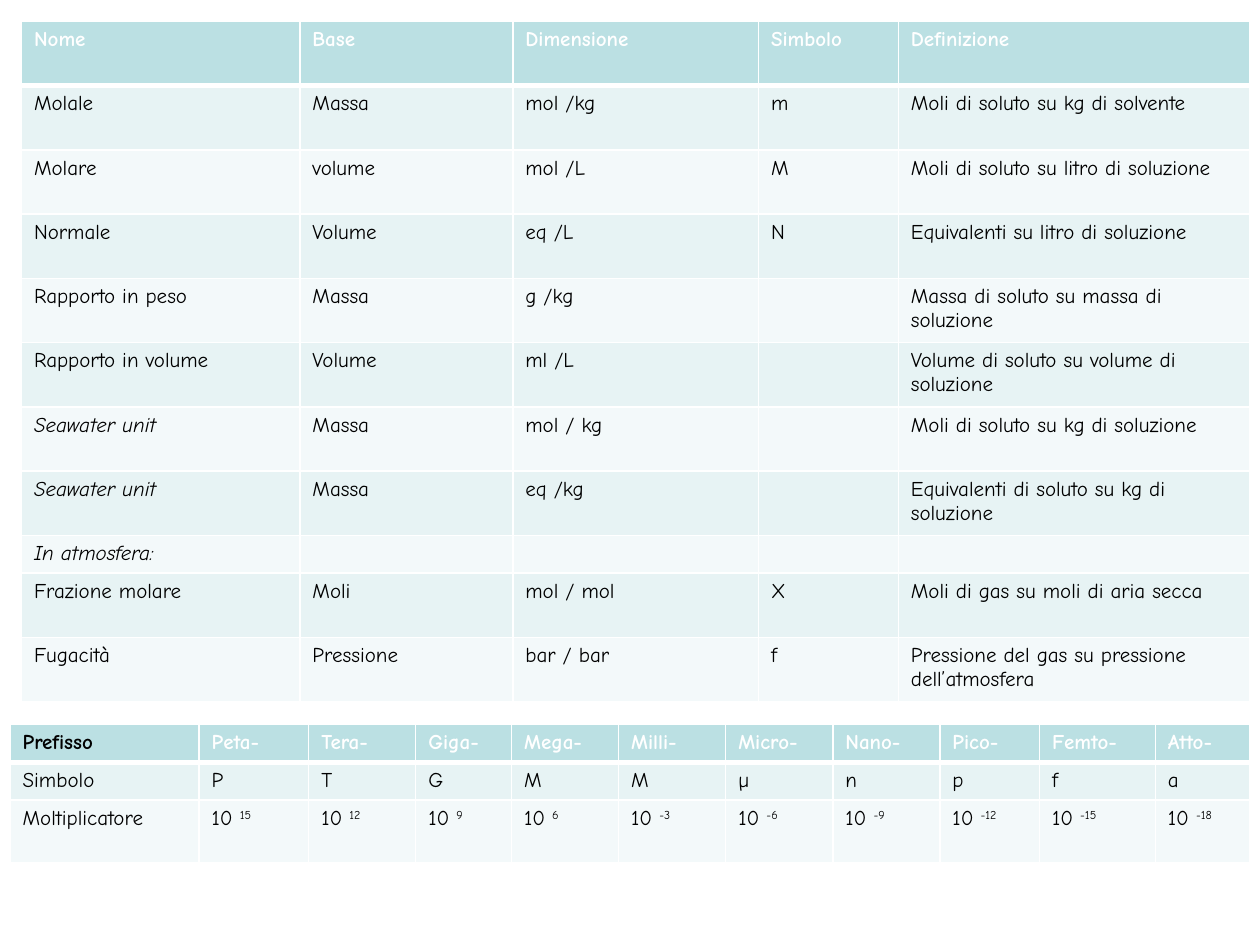
from dataclasses import dataclass

import lxml.etree
import pptx
import pptx.dml.color
import pptx.oxml.ns
import pptx.util

Inches = pptx.util.Inches
qn = pptx.oxml.ns.qn

COLORS = {
    "header": "BBE0E3",
    "odd_band": "E7F3F4",
    "even_band": "F3F9FA",
    "white": "FFFFFF",
    "black": "000000",
}
FONT_NAME = "Comic Neue"
FONT_SIZE = pptx.util.Pt(12)
THIN_BORDER = pptx.util.Pt(1)
HEADER_BORDER = pptx.util.Pt(3)
ITALIC_LABELS = {"Seawater unit", "In atmosfera:"}
DARK_HEADERS = {"Prefisso"}


@dataclass(frozen=True)
class TableContent:
    left: float
    top: float
    column_widths: list[float]
    row_heights: list[float]
    rows: list[list[str]]


@dataclass(frozen=True)
class Prefix:
    name: str
    symbol: str
    exponent: int


CONCENTRATIONS = TableContent(
    left=0.17,
    top=0.17,
    column_widths=[2.21, 1.69, 1.95, 1.11, 2.79],
    row_heights=[0.51] * 8 + [0.3] + [0.51] * 2,
    rows=[
        ["Nome", "Base", "Dimensione", "Simbolo", "Definizione"],
        ["Molale", "Massa", "mol /kg", "m", "Moli di soluto su kg di solvente"],
        ["Molare", "volume", "mol /L", "M", "Moli di soluto su litro di soluzione"],
        ["Normale", "Volume", "eq /L", "N", "Equivalenti su litro di soluzione"],
        ["Rapporto in peso", "Massa", "g /kg", "", "Massa di soluto su massa di soluzione"],
        ["Rapporto in volume", "Volume", "ml /L", "", "Volume di soluto su volume di soluzione"],
        ["Seawater unit", "Massa", "mol / kg", "", "Moli di soluto su kg di soluzione"],
        ["Seawater unit", "Massa", "eq /kg", "", "Equivalenti di soluto su kg di soluzione"],
        ["In atmosfera:", "", "", "", ""],
        ["Frazione molare", "Moli", "mol / mol", "X", "Moli di gas su moli di aria secca"],
        ["Fugacità", "Pressione", "bar / bar", "f", "Pressione del gas su pressione dell’atmosfera"],
    ],
)

PREFIXES = [
    Prefix("Peta-", "P", 15),
    Prefix("Tera-", "T", 12),
    Prefix("Giga-", "G", 9),
    Prefix("Mega-", "M", 6),
    Prefix("Milli-", "M", -3),
    Prefix("Micro-", "µ", -6),
    Prefix("Nano-", "n", -9),
    Prefix("Pico-", "p", -12),
    Prefix("Femto-", "f", -15),
    Prefix("Atto-", "a", -18),
]

MULTIPLIERS = TableContent(
    left=0.08,
    top=5.75,
    column_widths=[1.5, 0.87, 0.85, 0.76, 0.85, 0.85, 0.85, 0.85, 0.79, 0.92, 0.75],
    row_heights=[0.3, 0.3, 0.5],
    rows=[
        ["Prefisso"] + [prefix.name for prefix in PREFIXES],
        ["Simbolo"] + [prefix.symbol for prefix in PREFIXES],
        ["Moltiplicatore"] + [f"10 ^{prefix.exponent}" for prefix in PREFIXES],
    ],
)


def rgb(name: str) -> pptx.dml.color.RGBColor:
    return pptx.dml.color.RGBColor.from_string(COLORS[name])


def set_borders(cell, row_index: int) -> None:
    widths = {
        "a:lnL": THIN_BORDER,
        "a:lnR": THIN_BORDER,
        "a:lnT": HEADER_BORDER if row_index == 1 else THIN_BORDER,
        "a:lnB": HEADER_BORDER if row_index == 0 else THIN_BORDER,
    }
    properties = cell._tc.get_or_add_tcPr()
    for tag, width in widths.items():
        line = lxml.etree.SubElement(properties, qn(tag), w=str(int(width)))
        fill = lxml.etree.SubElement(line, qn("a:solidFill"))
        lxml.etree.SubElement(fill, qn("a:srgbClr"), val=COLORS["white"])


def add_run(paragraph, text: str, color: str, bold: bool, italic: bool):
    run = paragraph.add_run()
    run.text = text
    run.font.name = FONT_NAME
    run.font.size = FONT_SIZE
    run.font.bold = bold
    run.font.italic = italic
    run.font.color.rgb = rgb(color)
    return run


def write_cell(cell, text: str, is_header: bool) -> None:
    paragraph = cell.text_frame.paragraphs[0]
    if not text:
        end_properties = paragraph._p.get_or_add_endParaRPr()
        end_properties.set("sz", str(FONT_SIZE.centipoints))
        lxml.etree.SubElement(end_properties, qn("a:latin"), typeface=FONT_NAME)
        return
    color = "white" if is_header and text not in DARK_HEADERS else "black"
    italic = text in ITALIC_LABELS
    base, _, exponent = text.partition("^")
    add_run(paragraph, base, color, is_header, italic)
    if exponent:
        run = add_run(paragraph, exponent, color, is_header, italic)
        run.font._element.set("baseline", "30000")


def draw_table(slide, content: TableContent) -> None:
    shape = slide.shapes.add_table(
        len(content.rows),
        len(content.column_widths),
        Inches(content.left),
        Inches(content.top),
        Inches(sum(content.column_widths)),
        Inches(sum(content.row_heights)),
    )
    table = shape.table
    table.horz_banding = False
    for column, width in zip(table.columns, content.column_widths):
        column.width = Inches(width)
    for row, height in zip(table.rows, content.row_heights):
        row.height = Inches(height)
    for row_index, texts in enumerate(content.rows):
        is_header = row_index == 0
        band = "header" if is_header else "odd_band" if row_index % 2 else "even_band"
        for column_index, text in enumerate(texts):
            cell = table.cell(row_index, column_index)
            set_borders(cell, row_index)
            cell.fill.solid()
            cell.fill.fore_color.rgb = rgb(band)
            write_cell(cell, text, is_header)


def main() -> None:
    presentation = pptx.Presentation()
    presentation.slide_width = Inches(10)
    presentation.slide_height = Inches(7.5)
    slide = presentation.slides.add_slide(presentation.slide_layouts[6])
    for content in (CONCENTRATIONS, MULTIPLIERS):
        draw_table(slide, content)
    presentation.save("out.pptx")


if __name__ == "__main__":
    main()
